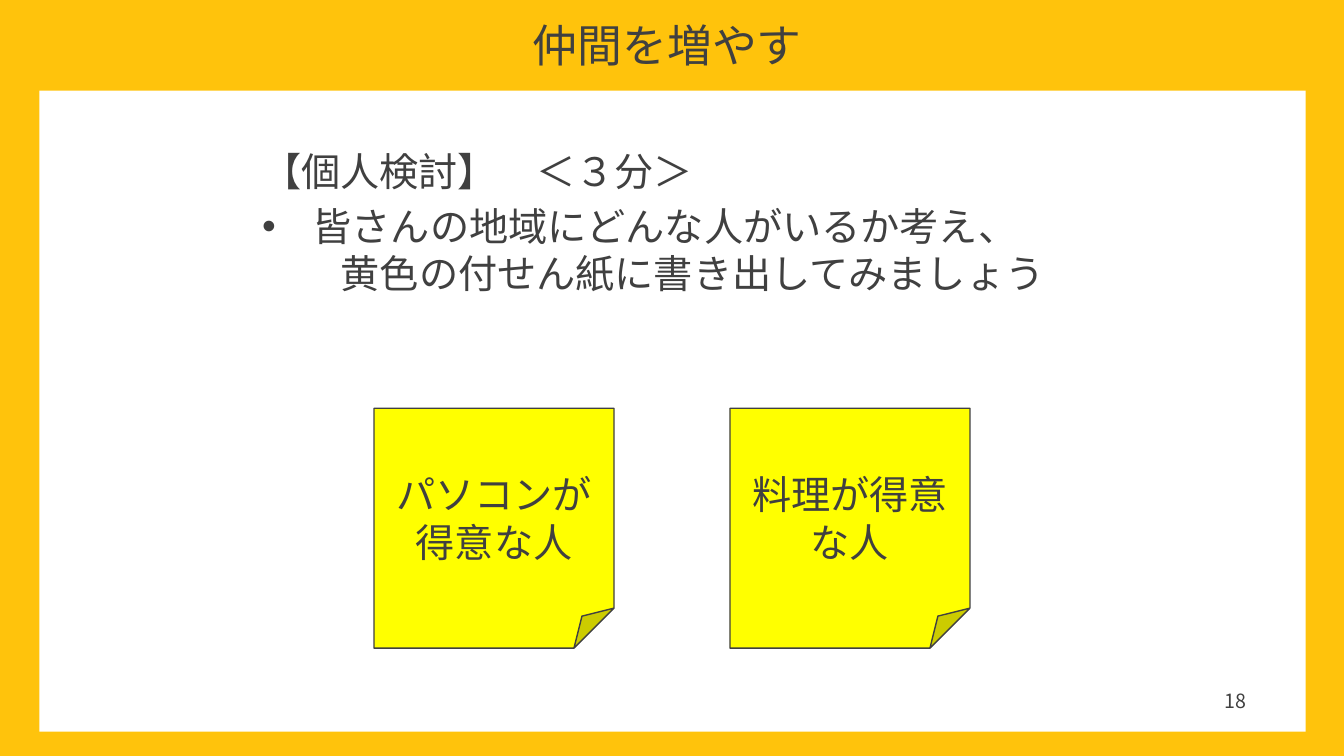
from lxml import etree
from pptx import Presentation
from pptx import util as u
from pptx.dml.color import RGBColor
from pptx.enum import shapes, text
from pptx.oxml.ns import qn

PX = 9144  # EMU per px, 100 px to the inch
FONT = "Noto Sans CJK JP"
AMBER = RGBColor(0xFF, 0xC3, 0x0C)
WHITE = RGBColor(0xFF, 0xFF, 0xFF)
YELLOW = RGBColor(0xFF, 0xFF, 0x00)
INK = RGBColor(0x40, 0x40, 0x40)

NOTES = ["パソコンが得意な人", "料理が得意な人"]
NOTE_LEFT, NOTE_TOP, NOTE_SIZE, NOTE_STEP = 371, 405, 238, 353


def px(*lengths):
    return [u.Emu(length * PX) for length in lengths]


def place(shape, *box):
    shape.left, shape.top, shape.width, shape.height = px(*box)


def set_frame(shape, anchor, insets=(10, 5, 10, 5)):
    frame = shape.text_frame
    frame.word_wrap = True
    frame.auto_size = text.MSO_AUTO_SIZE.NONE
    frame.vertical_anchor = anchor
    (frame.margin_left, frame.margin_top,
     frame.margin_right, frame.margin_bottom) = px(*insets)
    return frame


def write(paragraph, words, size, align):
    paragraph.alignment = align
    paragraph.space_before = u.Pt(0)
    run = paragraph.add_run()
    run.text = words
    run.font.size = u.Pt(size)
    run.font.name = FONT
    run.font.color.rgb = INK
    east_asian = etree.SubElement(run.font._element, qn("a:ea"))
    east_asian.set("typeface", FONT)


def set_indent(paragraph, left, first, bullet=None):
    properties = paragraph._p.get_or_add_pPr()
    properties.set("marL", str(left * PX))
    properties.set("indent", str(first * PX))
    if bullet:
        etree.SubElement(properties, qn("a:buChar")).set("char", bullet)
    else:
        etree.SubElement(properties, qn("a:buNone"))


def add_box(slide, kind, box, fill):
    shape = slide.shapes.add_shape(kind, *px(*box))
    shape.shadow.inherit = False
    shape.fill.solid()
    shape.fill.fore_color.rgb = fill
    shape.line.fill.background()
    return shape


def add_backdrop(slide):
    slide.background.fill.solid()
    slide.background.fill.fore_color.rgb = AMBER
    panel = add_box(slide, shapes.MSO_SHAPE.RECTANGLE, (39, 90, 1256, 636), WHITE)
    # Keep the panel behind the placeholders
    slide.shapes.title._element.addprevious(panel._element)


def fill_title(title):
    place(title, 182, 19, 960, 71)
    frame = set_frame(title, text.MSO_ANCHOR.TOP)
    paragraph = frame.paragraphs[0]
    write(paragraph, "仲間を増やす", 32, text.PP_ALIGN.CENTER)
    paragraph.line_spacing = 0.9


def fill_body(body):
    place(body, 250, 101, 833, 242)
    frame = set_frame(body, text.MSO_ANCHOR.MIDDLE, (10, 4, 10, 8))
    lines = [
        ("【個人検討】　＜３分＞", 0, 0, None, 6),
        ("皆さんの地域にどんな人がいるか考え、", 50, -50, "•", 0),
        ("黄色の付せん紙に書き出してみましょう", 78, 0, None, 0),
    ]
    for index, (words, left, first, bullet, after) in enumerate(lines):
        paragraph = frame.add_paragraph() if index else frame.paragraphs[0]
        write(paragraph, words, 28, text.PP_ALIGN.JUSTIFY)
        paragraph.space_after = u.Pt(after)
        set_indent(paragraph, left, first, bullet)


def add_sticky_note(slide, left, words):
    note = add_box(slide, shapes.MSO_SHAPE.FOLDED_CORNER,
                   (left, NOTE_TOP, NOTE_SIZE, NOTE_SIZE), YELLOW)
    note.line.color.rgb = INK
    note.line.width = u.Pt(1)
    frame = set_frame(note, text.MSO_ANCHOR.MIDDLE, (10, 24, 10, 5))
    write(frame.paragraphs[0], words, 28, text.PP_ALIGN.CENTER)


def add_page_number(slide, number):
    box = slide.shapes.add_textbox(*px(946, 675, 300, 40))
    frame = set_frame(box, text.MSO_ANCHOR.MIDDLE)
    write(frame.paragraphs[0], number, 14, text.PP_ALIGN.RIGHT)


def main():
    presentation = Presentation()
    presentation.slide_width, presentation.slide_height = px(1333, 750)
    slide = presentation.slides.add_slide(presentation.slide_layouts[1])

    # Frame, title and task
    add_backdrop(slide)
    fill_title(slide.shapes.title)
    fill_body(slide.placeholders[1])

    # Sticky notes
    for index, words in enumerate(NOTES):
        add_sticky_note(slide, NOTE_LEFT + index * NOTE_STEP, words)

    add_page_number(slide, "18")
    presentation.save("out.pptx")


if __name__ == "__main__":
    main()
